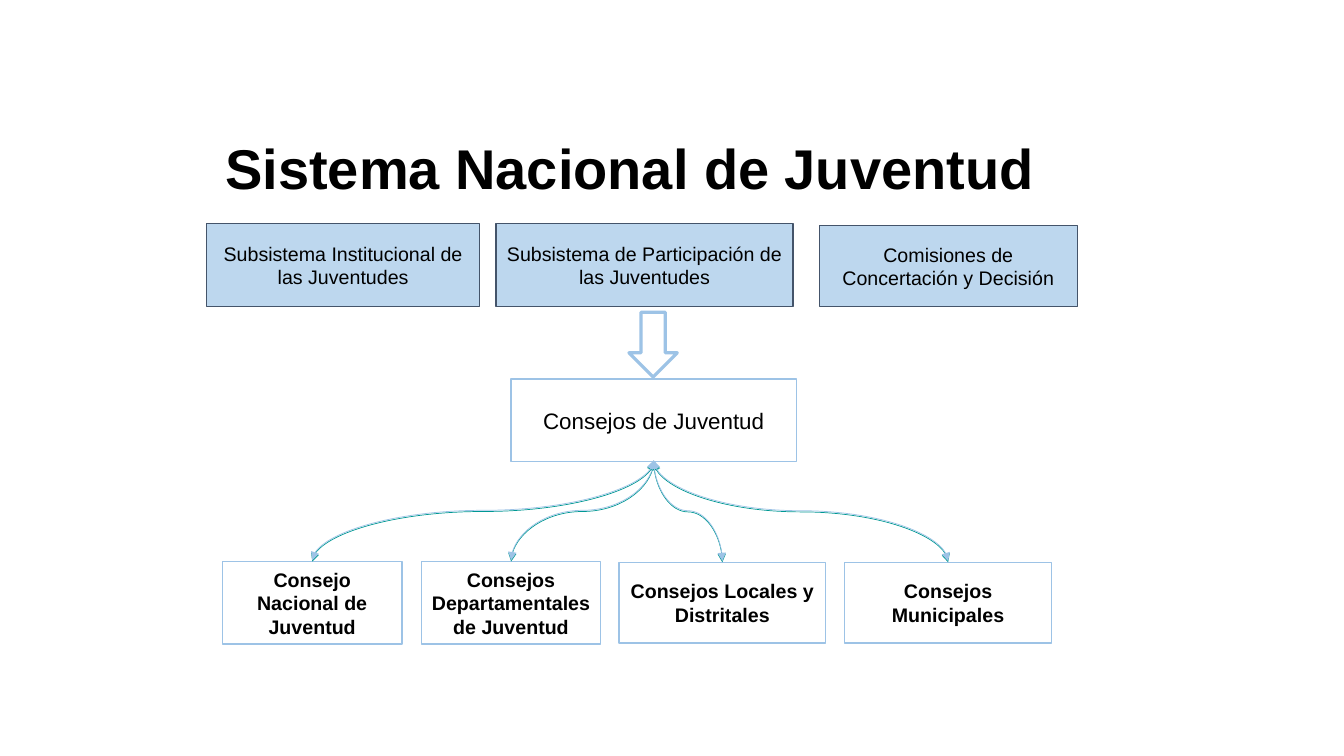
from dataclasses import dataclass

from lxml.etree import SubElement
from pptx import Presentation
from pptx.dml.color import RGBColor
from pptx.enum.shapes import MSO_CONNECTOR, MSO_SHAPE
from pptx.enum.text import MSO_ANCHOR, PP_ALIGN
from pptx.oxml.ns import qn
from pptx.util import Cm, Pt


@dataclass(frozen=True)
class Theme:
    font: str = "Arial"
    text: str = "000000"
    white: str = "FFFFFF"
    pale_blue: str = "BDD7EE"
    light_blue: str = "9DC3E6"
    slate: str = "44546A"
    teal: str = "009893"
    title_size: float = 40
    council_size: float = 16
    box_size: float = 14
    box_line: float = 1
    arrow_line: float = 2.25
    link_line: float = 0.5


THEME = Theme()

# text, left, top, width, height in cm
SUBSYSTEMS = [
    ("Subsistema Institucional de las Juventudes", 5.21, 5.64, 6.88, 2.08),
    ("Subsistema de Participación de las Juventudes", 12.5, 5.64, 7.49, 2.08),
    ("Comisiones de Concertación y Decisión", 20.65, 5.69, 6.5, 2.03),
]
COUNCILS = ("Consejos de Juventud", 12.88, 9.55, 7.19, 2.08)
COUNCIL_TYPES = [
    ("Consejo Nacional de Juventud", 5.61, 14.15, 4.52, 2.08),
    ("Consejos Departamentales de Juventud", 10.62, 14.15, 4.52, 2.08),
    ("Consejos Locales y Distritales", 15.6, 14.17, 5.21, 2.03),
    ("Consejos Municipales", 21.29, 14.17, 5.21, 2.03),
]


def rgb(color):
    return RGBColor.from_string(color)


def set_line(line, color, width):
    line.color.rgb = rgb(color)
    line.width = Pt(width)


def write(tf, text, size, bold=False):
    tf.word_wrap = True
    tf.margin_left = tf.margin_right = Cm(0.25)
    p = tf.paragraphs[0]
    p.alignment = PP_ALIGN.CENTER
    r = p.add_run()
    r.text = text
    r.font.name = THEME.font
    r.font.size = Pt(size)
    r.font.bold = bold
    r.font.color.rgb = rgb(THEME.text)


def add_title(s, text, left, top, width, height):
    sp = s.shapes.add_textbox(Cm(left), Cm(top), Cm(width), Cm(height))
    write(sp.text_frame, text, THEME.title_size, bold=True)


def add_box(s, text, left, top, width, height, *, fill=THEME.white,
            line=THEME.light_blue, size=THEME.box_size, bold=False):
    sp = s.shapes.add_shape(MSO_SHAPE.RECTANGLE, Cm(left), Cm(top), Cm(width), Cm(height))
    sp.shadow.inherit = False
    sp.fill.solid()
    sp.fill.fore_color.rgb = rgb(fill)
    set_line(sp.line, line, THEME.box_line)
    sp.text_frame.vertical_anchor = MSO_ANCHOR.MIDDLE
    write(sp.text_frame, text, size, bold)
    return sp


def add_down_arrow(s, left, top, width, height):
    sp = s.shapes.add_shape(MSO_SHAPE.DOWN_ARROW, Cm(left), Cm(top), Cm(width), Cm(height))
    sp.shadow.inherit = False
    sp.fill.background()
    set_line(sp.line, THEME.light_blue, THEME.arrow_line)


def add_curve(s, upper, lower, color, rise=0, glued=False):
    """Double-headed curve from the bottom of one box to the top of another."""
    x1, y1 = upper.left + upper.width // 2, upper.top + upper.height - rise
    x2, y2 = lower.left + lower.width // 2, lower.top - rise
    c = s.shapes.add_connector(MSO_CONNECTOR.CURVE, x1, y1, x2, y2)
    if glued:
        c.begin_connect(upper, 2)
        c.end_connect(lower, 0)
    set_line(c.line, color, THEME.link_line)
    ln = c.line._ln
    for end in ("a:headEnd", "a:tailEnd"):
        SubElement(ln, qn(end), type="triangle")
    sp_pr = c._element.spPr
    SubElement(sp_pr, qn("a:effectLst"))

    # A quarter turn makes the curve leave and arrive vertically.
    c.width, c.height = y2 - y1, abs(x2 - x1)
    c.left = (x1 + x2 - c.width) // 2
    c.top = (y1 + y2 - c.height) // 2
    xfrm = sp_pr.find(qn("a:xfrm"))
    to_right = x2 > x1
    xfrm.set("rot", str((270 if to_right else 90) * 60000))
    xfrm.set("flipH", "1" if to_right else "0")


def main():
    prs = Presentation()
    prs.slide_width, prs.slide_height = Cm(33.87), Cm(19.05)
    s = prs.slides.add_slide(prs.slide_layouts[6])

    for subsystem in SUBSYSTEMS:
        add_box(s, *subsystem, fill=THEME.pale_blue, line=THEME.slate)
    councils = add_box(s, *COUNCILS, size=THEME.council_size)
    council_types = [add_box(s, *item, bold=True) for item in COUNCIL_TYPES]
    add_title(s, "Sistema Nacional de Juventud", 3.89, 3.23, 23.95, 1.96)
    add_down_arrow(s, 15.85, 7.87, 1.22, 1.63)

    for color, rise, glued in ((THEME.teal, 0, True), (THEME.light_blue, Cm(0.03), False)):
        for council_type in reversed(council_types):
            add_curve(s, councils, council_type, color, rise, glued)

    prs.save("out.pptx")


if __name__ == "__main__":
    main()
